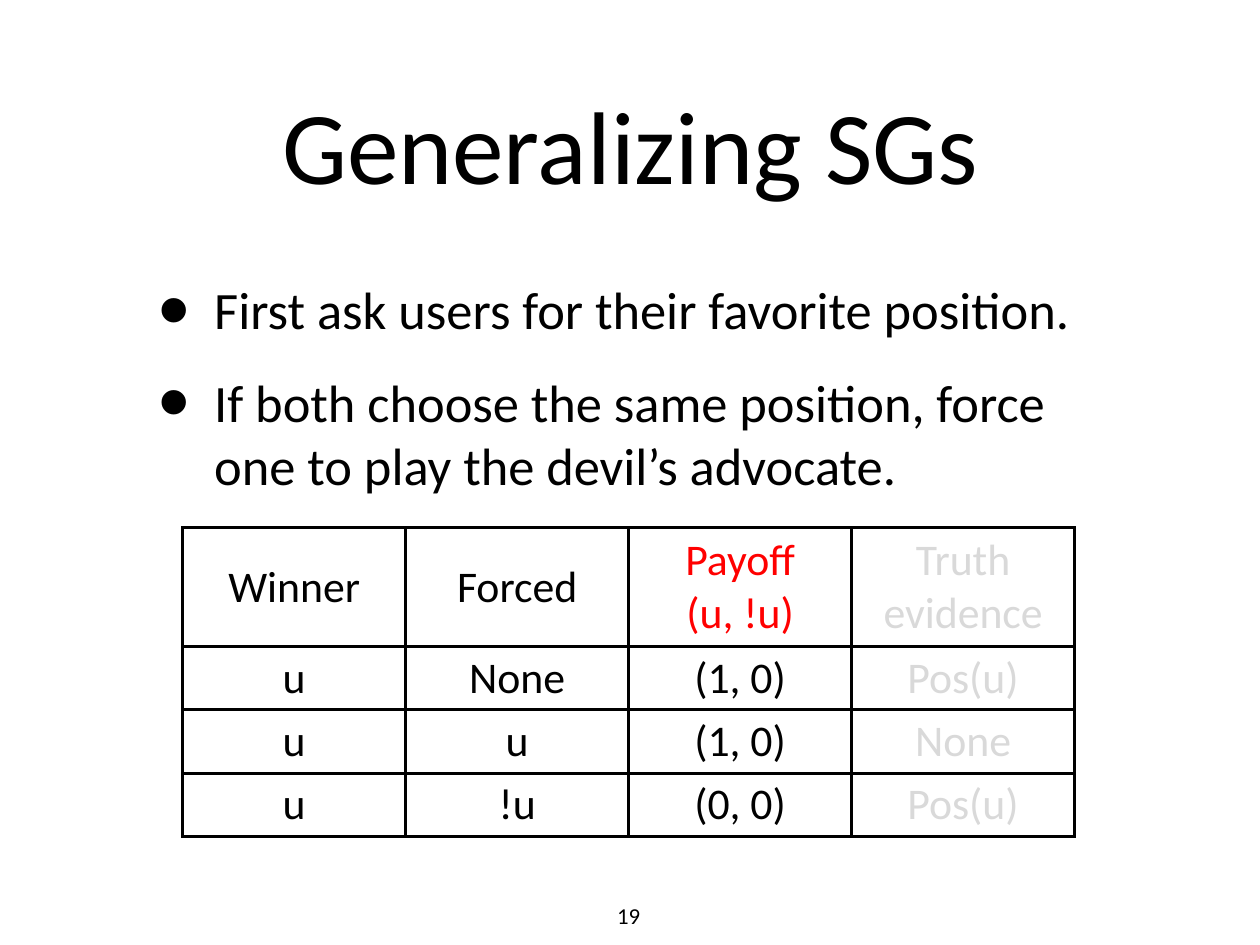
from lxml import etree
from pptx import Presentation, util as u
from pptx.dml.color import RGBColor
from pptx.enum import text
from pptx.oxml import ns

BLACK = RGBColor(0, 0, 0)
RED = RGBColor(255, 0, 0)
GRAY = RGBColor(217, 217, 217)
FONT = "Calibri"

TITLE = "Generalizing SGs"
POINTS = [
    "First ask users for their favorite position.",
    "If both choose the same position, force one to play the devil’s advocate.",
]
PAYOFFS = [
    ("Winner", "Forced", "Payoff\n(u, !u)", "Truth evidence"),
    ("u", "None", "(1, 0)", "Pos(u)"),
    ("u", "u", "(1, 0)", "None"),
    ("u", "!u", "(0, 0)", "Pos(u)"),
]
PAGE = "19"

PX_PER_INCH = 100
HEADING_BOX = (98, 20, 805, 188)
POINTS_BOX = (98, 213, 805, 188)
PAGE_BOX = (486, 712, 26, 28)
GRID_LEFT, GRID_TOP, COLUMN = 145, 419, 177
ROWS = (94, 50, 50, 50)
INSET = 4


def px(n):
    return u.Emu(n * 914400 // PX_PER_INCH)


def place(shape, box):
    shape.left, shape.top, shape.width, shape.height = map(px, box)


def write(frame, content, size, color=BLACK, align=text.PP_ALIGN.CENTER,
          before=0, inset=(INSET, INSET), wrap=True):
    frame.word_wrap = wrap
    frame.auto_size = text.MSO_AUTO_SIZE.NONE
    frame.margin_left = frame.margin_right = px(inset[0])
    frame.margin_top = frame.margin_bottom = px(inset[1])
    frame.text = content
    for line in frame.paragraphs:
        line.alignment = align
        line.space_before = u.Pt(before)
        for run in line.runs:
            run.font.name = FONT
            run.font.size = u.Pt(size)
            run.font.color.rgb = color


def add_bullet(line, left, hanging, percent):
    props = line._p.get_or_add_pPr()
    props.set("marL", str(px(left)))
    props.set("indent", str(-px(hanging)))
    etree.SubElement(props, ns.qn("a:buSzPct")).set("val", str(percent * 1000))
    etree.SubElement(props, ns.qn("a:buChar")).set("char", "•")


def add_borders(cell, width):
    props = cell._tc.get_or_add_tcPr()
    for order, side in enumerate("LRTB"):
        edge = etree.Element(ns.qn(f"a:ln{side}"), w=str(u.Pt(width)))
        fill = etree.SubElement(edge, ns.qn("a:solidFill"))
        etree.SubElement(fill, ns.qn("a:srgbClr")).set("val", str(BLACK))
        props.insert(order, edge)


def cell_color(row, column):
    if column == 3:
        return GRAY
    return RED if (row, column) == (0, 2) else BLACK


def main():
    deck = Presentation()
    deck.slide_width, deck.slide_height = px(1000), px(750)
    slide = deck.slides.add_slide(deck.slide_layouts[1])

    page = slide.shapes.add_textbox(*map(px, PAGE_BOX))
    write(page.text_frame, PAGE, 13, inset=(7, 4), wrap=False)

    heading = slide.shapes.title
    place(heading, HEADING_BOX)
    write(heading.text_frame, TITLE, 59)
    heading.text_frame.vertical_anchor = text.MSO_ANCHOR.MIDDLE

    points = slide.placeholders[1]
    place(points, POINTS_BOX)
    write(points.text_frame, "\n".join(POINTS), 30,
          align=text.PP_ALIGN.LEFT, before=16.9)
    points.text_frame.vertical_anchor = text.MSO_ANCHOR.MIDDLE
    for line in points.text_frame.paragraphs:
        add_bullet(line, 68, 44, 171)

    columns = len(PAYOFFS[0])
    payoffs = slide.shapes.add_table(
        len(PAYOFFS), columns, px(GRID_LEFT), px(GRID_TOP),
        px(COLUMN * columns), px(sum(ROWS))).table
    payoffs.first_row = payoffs.horz_banding = False
    for column in payoffs.columns:
        column.width = px(COLUMN)
    for r, (values, height) in enumerate(zip(PAYOFFS, ROWS)):
        payoffs.rows[r].height = px(height)
        for c, value in enumerate(values):
            cell = payoffs.cell(r, c)
            write(cell.text_frame, value, 25, color=cell_color(r, c))
            cell.margin_left = cell.margin_right = px(INSET)
            cell.margin_top = cell.margin_bottom = px(INSET)
            cell.vertical_anchor = text.MSO_ANCHOR.MIDDLE
            cell.fill.background()
            add_borders(cell, 2)

    deck.save("out.pptx")


if __name__ == "__main__":
    main()
